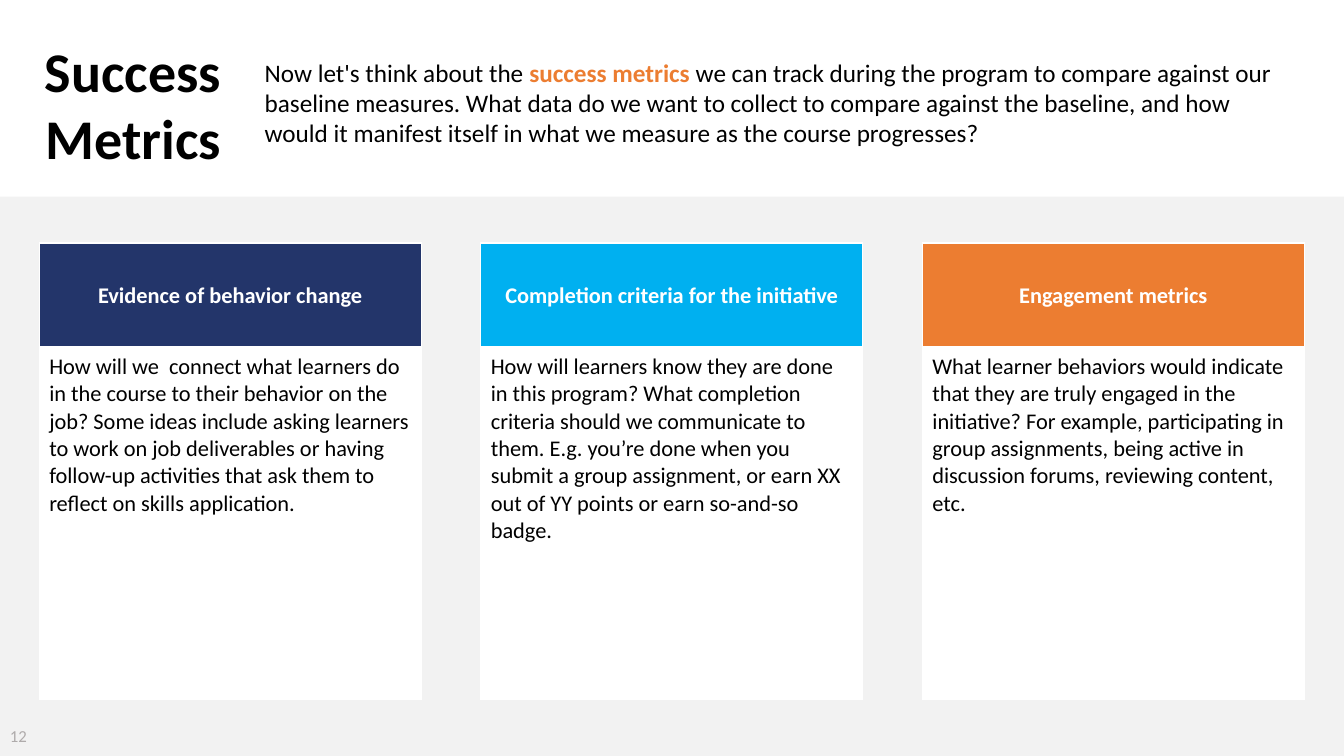
"""Build the Success Metrics slide with three prompt tables."""
from lxml import etree
from pptx import Presentation
from pptx.dml.color import RGBColor
from pptx.enum import shapes, text
from pptx.oxml import ns
from pptx.util import Pt

FONT = "Calibri"
BLACK = RGBColor(0x00, 0x00, 0x00)
WHITE = RGBColor(0xFF, 0xFF, 0xFF)
PALE_GRAY = RGBColor(0xF2, 0xF2, 0xF2)
NUMBER_GRAY = RGBColor(0xAF, 0xAB, 0xAB)
NAVY = RGBColor(0x23, 0x35, 0x6A)
SKY = RGBColor(0x00, 0xB0, 0xF0)
ORANGE = RGBColor(0xEC, 0x7D, 0x31)

TITLE = "Success Metrics"
INTRO = [
    ("Now let's think about the ", BLACK, False),
    ("success metrics ", ORANGE, True),
    ("we can track during the program to compare against our baseline measures. "
     "What data do we want to collect to compare against the baseline, and how would "
     "it manifest itself in what we measure as the course progresses?", BLACK, False),
]
METRICS = [
    ("Evidence of behavior change", NAVY,
     "How will we  connect what learners do in the course to their behavior on the job? "
     "Some ideas include asking learners to work on job deliverables or having follow-up "
     "activities that ask them to reflect on skills application."),
    ("Completion criteria for the initiative", SKY,
     "How will learners know they are done in this program? What completion criteria "
     "should we communicate to them. E.g. you’re done when you submit a group assignment, "
     "or earn XX out of YY points or earn so-and-so badge."),
    ("Engagement metrics", ORANGE,
     "What learner behaviors would indicate that they are truly engaged in the initiative? "
     "For example, participating in group assignments, being active in discussion forums, "
     "reviewing content, etc."),
]
PAGE_NUMBER = "12"

SLIDE_WIDTH, SLIDE_HEIGHT = 960, 540
BAND_TOP = 140.4
TABLE_LEFT, TABLE_TOP, TABLE_WIDTH, TABLE_STEP = 28, 173.5, 273, 315.4
ROW_HEIGHTS = (75, 251)


def add_run(paragraph, wording, size, color, bold=False):
    """Append one formatted run."""
    run = paragraph.add_run()
    run.text = wording
    run.font.name = FONT
    run.font.size = Pt(size)
    run.font.bold = bold
    run.font.color.rgb = color


def add_text_box(slide, left, top, width, height):
    """Add a wrapping text box and return its text frame."""
    box = slide.shapes.add_textbox(Pt(left), Pt(top), Pt(width), Pt(height))
    box.text_frame.word_wrap = True
    return box.text_frame


def format_cell(cell, fill, bottom_width):
    """Give a cell white borders and a solid fill."""
    properties = cell._tc.get_or_add_tcPr()
    for side, width in (("L", 1), ("R", 1), ("T", 1), ("B", bottom_width)):
        line = etree.SubElement(properties, ns.qn(f"a:ln{side}"), w=str(Pt(width)))
        solid = etree.SubElement(line, ns.qn("a:solidFill"))
        etree.SubElement(solid, ns.qn("a:srgbClr"), val=str(WHITE))
    cell.fill.solid()
    cell.fill.fore_color.rgb = fill


def add_metric_table(slide, left, heading, color, prompt):
    """Add a coloured heading cell above a white prompt cell."""
    frame = slide.shapes.add_table(2, 1, Pt(left), Pt(TABLE_TOP),
                                   Pt(TABLE_WIDTH), Pt(sum(ROW_HEIGHTS)))
    table = frame.table
    table.horz_banding = False
    for row, height in zip(table.rows, ROW_HEIGHTS):
        row.height = Pt(height)
    header, body = table.cell(0, 0), table.cell(1, 0)
    format_cell(header, color, 3)
    format_cell(body, WHITE, 1)
    header.vertical_anchor = text.MSO_ANCHOR.MIDDLE
    paragraph = header.text_frame.paragraphs[0]
    paragraph.alignment = text.PP_ALIGN.CENTER
    add_run(paragraph, heading, 16, WHITE, True)
    add_run(body.text_frame.paragraphs[0], prompt, 16, BLACK)


def main():
    """Compose and save the slide."""
    presentation = Presentation()
    presentation.slide_width = Pt(SLIDE_WIDTH)
    presentation.slide_height = Pt(SLIDE_HEIGHT)
    slide = presentation.slides.add_slide(presentation.slide_layouts[5])

    title = slide.shapes.title
    title.left, title.top, title.width, title.height = Pt(-13), Pt(21.6), Pt(178), Pt(104.4)
    title.text_frame.auto_size = text.MSO_AUTO_SIZE.NONE
    paragraph = title.text_frame.paragraphs[0]
    paragraph.alignment = text.PP_ALIGN.RIGHT
    add_run(paragraph, TITLE, 40, BLACK, True)

    band = slide.shapes.add_shape(shapes.MSO_SHAPE.RECTANGLE, 0, Pt(BAND_TOP),
                                  Pt(SLIDE_WIDTH), Pt(SLIDE_HEIGHT - BAND_TOP))
    band.shadow.inherit = False
    band.fill.solid()
    band.fill.fore_color.rgb = PALE_GRAY
    band.line.fill.background()

    intro = add_text_box(slide, 182, 37.4, 750, 72.7)
    for wording, color, bold in INTRO:
        add_run(intro.paragraphs[0], wording, 18, color, bold)

    for index, metric in enumerate(METRICS):
        add_metric_table(slide, TABLE_LEFT + index * TABLE_STEP, *metric)

    number = add_text_box(slide, 0, 511.2, 43.2, 28.8)
    number.vertical_anchor = text.MSO_ANCHOR.MIDDLE
    add_run(number.paragraphs[0], PAGE_NUMBER, 12, NUMBER_GRAY)

    presentation.save("out.pptx")


if __name__ == "__main__":
    main()
